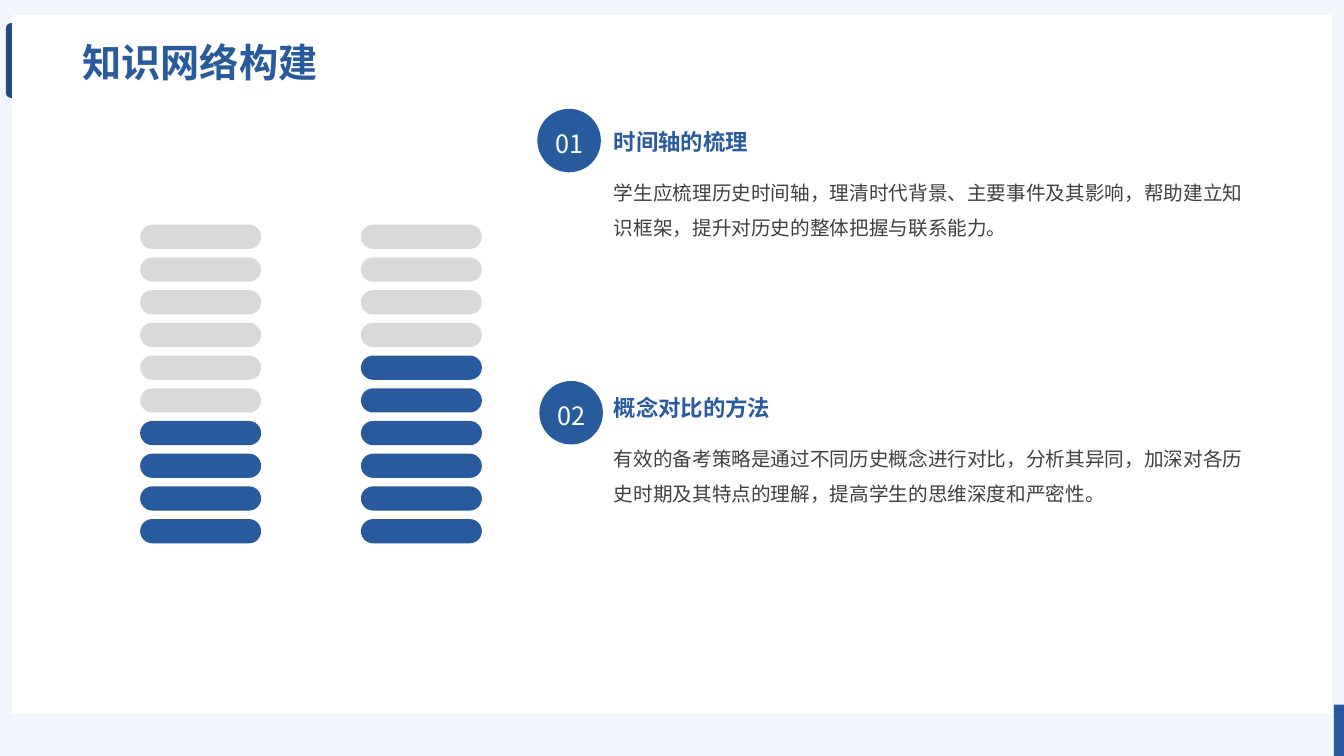
from dataclasses import dataclass

from lxml.etree import SubElement as SubElem
from pptx import Presentation as Deck
from pptx.dml.color import RGBColor as Color
from pptx.enum.shapes import MSO_SHAPE as Kind
from pptx.enum.text import MSO_ANCHOR as Anchor
from pptx.enum.text import MSO_AUTO_SIZE as Fit
from pptx.enum.text import PP_ALIGN as Align
from pptx.oxml.ns import qn
from pptx.shapes.autoshape import Shape
from pptx.slide import Slide
from pptx.text.text import TextFrame as Frame
from pptx.util import Inches, Pt


@dataclass(frozen=True)
class Theme:
    font: str = "Noto Sans CJK SC"
    back: str = "F2F5FB"
    blue: str = "285B9E"
    navy: str = "224C84"
    grey: str = "D9D9D9"
    ink: str = "404040"
    white: str = "FFFFFF"
    title: int = 28
    mark: int = 18
    head: int = 16
    body: int = 14


@dataclass(frozen=True)
class Box:
    left: float
    top: float
    width: float
    height: float

    def place(self) -> list[Inches]:
        return [Inches(n) for n in (self.left, self.top, self.width, self.height)]


@dataclass(frozen=True)
class Stack:
    left: float
    full: int


@dataclass(frozen=True)
class Point:
    mark: str
    spot: Box
    top: float
    head: str
    body: str


THEME = Theme()
BARS = 10
PITCH = 2.92 / (BARS - 1)
STACKS = (Stack(1.39, 4), Stack(3.58, 6))
POINTS = (
    Point("01", Box(5.33, 1.08, 0.63, 0.63), 1.22, "时间轴的梳理",
          "学生应梳理历史时间轴，理清时代背景、主要事件及其影响，"
          "帮助建立知识框架，提升对历史的整体把握与联系能力。"),
    Point("02", Box(5.35, 3.78, 0.63, 0.63), 3.86, "概念对比的方法",
          "有效的备考策略是通过不同历史概念进行对比，分析其异同，"
          "加深对各历史时期及其特点的理解，提高学生的思维深度和严密性。"),
)


def apply(item: object, form: dict[str, object]) -> None:
    for key, value in form.items():
        setattr(item, key, value)


def draw(slide: Slide, kind: Kind, box: Box, color: str) -> Shape:
    shape = slide.shapes.add_shape(kind, *box.place())
    shape.shadow.inherit = False
    shape.fill.solid()
    shape.fill.fore_color.rgb = Color.from_string(color)
    shape.line.fill.background()
    return shape


def fill_text(frame: Frame, text: str, size: int, color: str,
              bold: bool = False, form: dict[str, object] | None = None) -> None:
    para = frame.paragraphs[0]
    apply(para, form or {})
    run = para.add_run()
    run.text = text
    apply(run.font, {"name": THEME.font, "size": Pt(size), "bold": bold})
    run.font.color.rgb = Color.from_string(color)
    SubElem(run.font._element, qn("a:ea"), typeface=THEME.font)


def write(slide: Slide, box: Box, text: str, size: int, color: str,
          bold: bool = False, form: dict[str, object] | None = None) -> None:
    frame = slide.shapes.add_textbox(*box.place()).text_frame
    apply(frame, {"word_wrap": True, "auto_size": Fit.SHAPE_TO_FIT_TEXT})
    fill_text(frame, text, size, color, bold, form)


def draw_frame(slide: Slide) -> None:
    slide.background.fill.solid()
    slide.background.fill.fore_color.rgb = Color.from_string(THEME.back)
    tab = draw(slide, Kind.ROUND_2_SAME_RECTANGLE,
               Box(-0.21, 0.5, 0.74, 0.2), THEME.navy)
    tab.rotation = 270
    tab.adjustments[0] = 0.23
    draw(slide, Kind.RECTANGLE, Box(13.23, 6.99, 0.1, 0.51), THEME.blue)
    draw(slide, Kind.RECTANGLE, Box(0.12, 0.15, 13.09, 6.93), THEME.white)


def draw_stack(slide: Slide, stack: Stack) -> None:
    for row in range(BARS):
        color = THEME.blue if row < stack.full else THEME.grey
        box = Box(stack.left, 5.15 - row * PITCH, 1.2, 0.24)
        bar = draw(slide, Kind.ROUNDED_RECTANGLE, box, color)
        bar.adjustments[0] = 0.5


def draw_point(slide: Slide, point: Point) -> None:
    frame = draw(slide, Kind.OVAL, point.spot, THEME.blue).text_frame
    apply(frame, {
        "margin_left": 0, "margin_top": 0, "margin_right": 0,
        "margin_bottom": 0, "vertical_anchor": Anchor.MIDDLE,
    })
    fill_text(frame, point.mark, THEME.mark, THEME.white,
              form={"alignment": Align.CENTER, "line_spacing": 1.2})
    write(slide, Box(5.99, point.top, 6.63, 0.37), point.head,
          THEME.head, THEME.blue, True)
    write(slide, Box(5.99, point.top + 0.41, 6.63, 1.83), point.body,
          THEME.body, THEME.ink, form={"line_spacing": 1.5})


def main() -> None:
    deck = Deck()
    apply(deck, {"slide_width": Inches(13.33), "slide_height": Inches(7.5)})
    slide = deck.slides.add_slide(deck.slide_layouts[6])
    draw_frame(slide)
    write(slide, Box(0.72, 0.33, 9.21, 0.57), "知识网络构建",
          THEME.title, THEME.blue, True)
    for stack in STACKS:
        draw_stack(slide, stack)
    for point in POINTS:
        draw_point(slide, point)
    deck.save("out.pptx")


if __name__ == "__main__":
    main()
